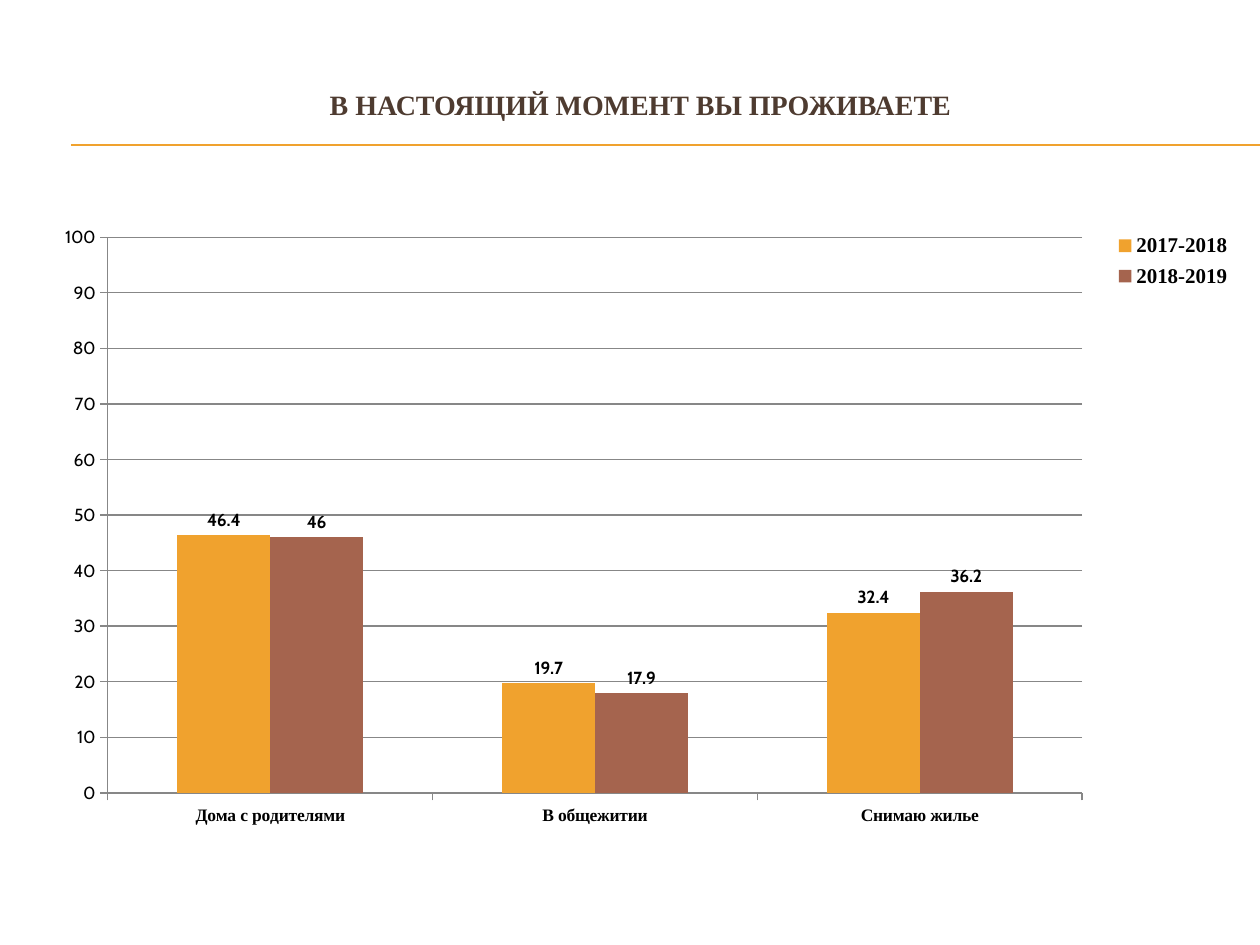
from dataclasses import dataclass

from lxml import etree
from pptx import Presentation
from pptx.chart.data import CategoryChartData
from pptx.dml.color import RGBColor
from pptx.enum import chart as kinds, shapes, text
from pptx.oxml import ns
from pptx.util import Pt


@dataclass(frozen=True)
class Theme:
    gold: str = "F0A22E"
    rust: str = "A5644E"
    brown: str = "4E3B30"
    black: str = "000000"
    gray: str = "878787"
    serif: str = "Times New Roman"
    sans: str = "Cabin"
    head: int = 16
    key: int = 12
    small: int = 10


class Deck:
    def __init__(self, theme):
        self.theme = theme
        self.file = Presentation()
        self.file.slide_width, self.file.slide_height = Pt(720), Pt(540)
        self.slide = self.file.slides.add_slide(self.file.slide_layouts[5])

    def style(self, font, size, name, color, bold=False):
        look = {"size": Pt(size), "name": name, "bold": bold}
        for key, value in look.items():
            setattr(font, key, value)
        font.color.rgb = RGBColor.from_string(color)

    def title(self, words, box):
        shape = self.slide.shapes.title
        for key, value in zip(("left", "top", "width", "height"), box):
            setattr(shape, key, Pt(value))
        frame = shape.text_frame
        frame.text = words
        look = {"word_wrap": True, "auto_size": text.MSO_AUTO_SIZE.NONE,
                "vertical_anchor": text.MSO_ANCHOR.MIDDLE, "margin_bottom": Pt(22)}
        for key, value in look.items():
            setattr(frame, key, value)
        para = frame.paragraphs[0]
        para.alignment = text.PP_ALIGN.CENTER
        self.style(para.runs[0].font, self.theme.head, self.theme.serif, self.theme.brown, True)

    def rule(self, left, right, top):
        line = self.slide.shapes.add_connector(
            shapes.MSO_CONNECTOR.STRAIGHT, Pt(left), Pt(top), Pt(right), Pt(top))
        line.line.width = Pt(0.75)
        line.line.color.rgb = RGBColor.from_string(self.theme.gold)
        etree.SubElement(line._element.spPr, ns.qn("a:effectLst"))

    def place(self, part, area, inner=False):
        old = part.find(ns.qn("c:layout"))
        if old is not None:
            part.remove(old)
        layout = etree.Element(ns.qn("c:layout"))
        manual = etree.SubElement(layout, ns.qn("c:manualLayout"))
        pairs = [("layoutTarget", "inner")] if inner else []
        pairs += [("xMode", "edge"), ("yMode", "edge")]
        pairs += zip("xywh", area)
        for tag, value in pairs:
            etree.SubElement(manual, ns.qn("c:" + tag)).set("val", str(value))
        part.insert(0 if inner else 1, layout)

    def bars(self, box, names, rows):
        theme = self.theme
        data = CategoryChartData()
        data.categories = names
        for name, values, color in rows:
            data.add_series(name, values)
        chart = self.slide.shapes.add_chart(
            kinds.XL_CHART_TYPE.COLUMN_CLUSTERED, *map(Pt, box), data).chart
        chart.has_title = False
        self.style(chart.font, theme.small, theme.sans, theme.black)

        plot = chart.plots[0]
        for key, value in {"gap_width": 150, "overlap": 0, "vary_by_categories": False}.items():
            setattr(plot, key, value)
        for series, (name, values, color) in zip(plot.series, rows):
            series.format.fill.solid()
            series.format.fill.fore_color.rgb = RGBColor.from_string(color)
            labels = series.data_labels
            labels.show_value = True
            labels.position = kinds.XL_LABEL_POSITION.OUTSIDE_END
            self.style(labels.font, theme.small, theme.sans, theme.black, True)

        scale, cats = chart.value_axis, chart.category_axis
        look = {"minimum_scale": 0, "maximum_scale": 100, "major_unit": 10,
                "has_major_gridlines": True}
        for key, value in look.items():
            setattr(scale, key, value)
        for axis in (scale, cats):
            axis.major_tick_mark = kinds.XL_TICK_MARK.OUTSIDE
        for part in (scale, cats, scale.major_gridlines):
            part.format.line.width = Pt(0.75)
            part.format.line.color.rgb = RGBColor.from_string(theme.gray)
        self.style(scale.tick_labels.font, theme.small, theme.sans, theme.black)
        self.style(cats.tick_labels.font, theme.small, theme.serif, theme.black, True)

        chart.has_legend = True
        key = chart.legend
        key.position = kinds.XL_LEGEND_POSITION.RIGHT
        key.include_in_layout = False
        self.style(key.font, theme.key, theme.serif, theme.black, True)
        area = chart._chartSpace.chart.plotArea
        self.place(area, (0.055, 0.037, 0.814, 0.891), True)
        self.place(key._element, (0.89, 0.02, 0.11, 0.11))


def main():
    theme = Theme()
    deck = Deck(theme)
    deck.rule(40.5, 720, 82.8)
    deck.rule(40.5, 720, 83.3)
    deck.title("В НАСТОЯЩИЙ МОМЕНТ ВЫ ПРОЖИВАЕТЕ", (24, 36, 684, 66))
    deck.bars((24, 122.4, 684, 356.4),
              ("Дома с родителями", "В общежитии", "Снимаю жилье"),
              (("2017-2018", (46.4, 19.7, 32.4), theme.gold),
               ("2018-2019", (46, 17.9, 36.2), theme.rust)))
    deck.file.save("out.pptx")


if __name__ == "__main__":
    main()
